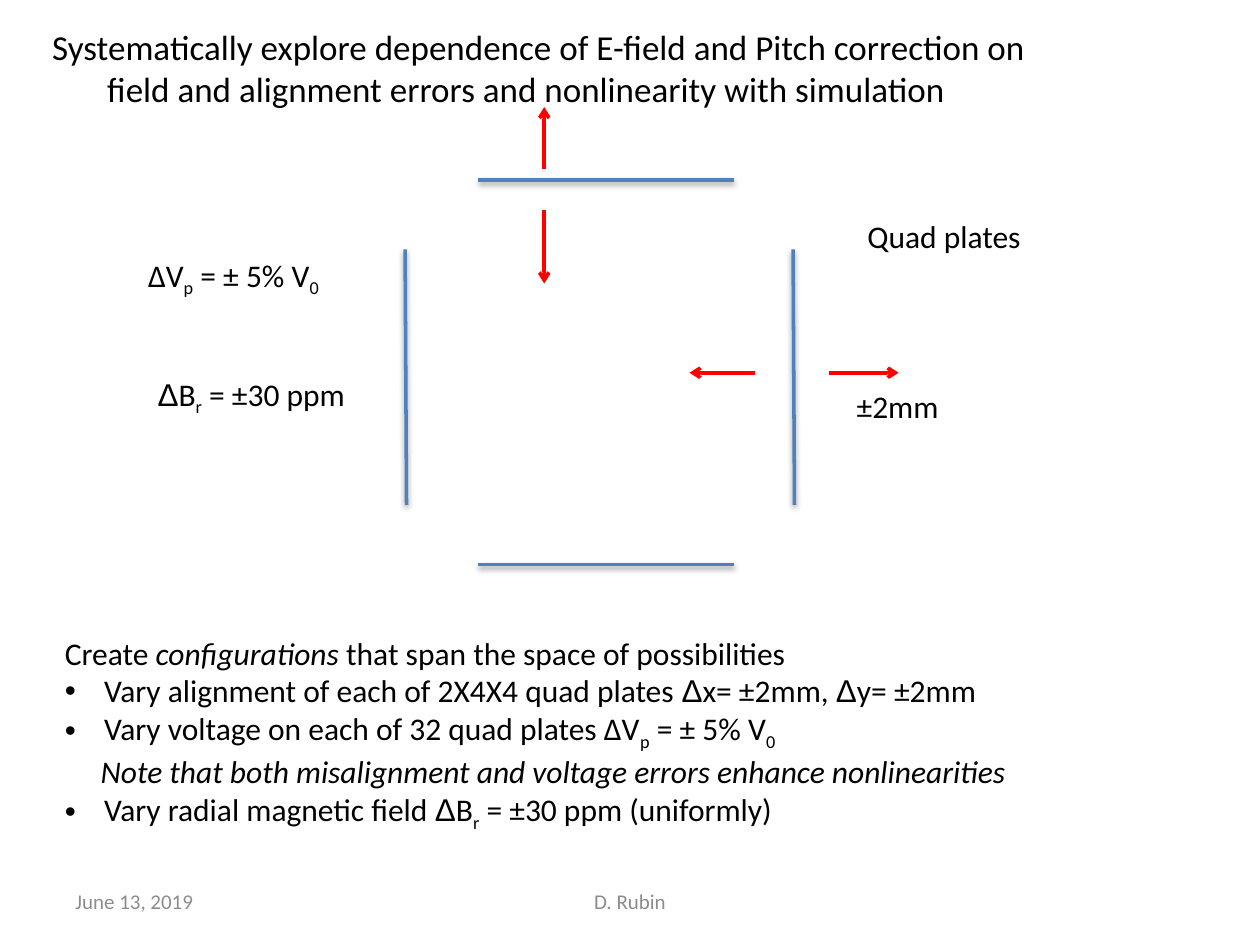
from lxml import etree
from pptx import Presentation
from pptx.dml.color import RGBColor
from pptx.enum.shapes import MSO_CONNECTOR
from pptx.enum.text import MSO_ANCHOR, MSO_AUTO_SIZE, PP_ALIGN
from pptx.oxml import parse_xml
from pptx.oxml.ns import nsdecls, qn
from pptx.util import Pt

LINE = MSO_CONNECTOR.STRAIGHT
MID = MSO_ANCHOR.MIDDLE
TOP = MSO_ANCHOR.TOP
GROW = MSO_AUTO_SIZE.SHAPE_TO_FIT_TEXT
LEFT, MIDDLE = PP_ALIGN.LEFT, PP_ALIGN.CENTER

BLACK, GREY, BLUE, RED = "000000", "8C8C8C", "4F81BD", "FF0000"
SHADE = (
    f'<a:effectLst {nsdecls("a")}>'
    '<a:outerShdw blurRad="40000" dist="20000" dir="5400000" rotWithShape="0">'
    '<a:srgbClr val="000000"><a:alpha val="38000"/></a:srgbClr>'
    '</a:outerShdw></a:effectLst>'
)
BARE = f'<a:effectLst {nsdecls("a")}/>'

# Run styles: "" plain, "i" italic, "s" subscript, "a" Arial
VOLT = [("ΔV", ""), ("p", "s"), (" = ± 5% V", ""), ("0", "s")]
FIELD = [("Δ", "a"), ("B", ""), ("r", "s"), (" = ±30 ppm", "")]


def paint(code):
    return RGBColor.from_string(code)


class Page:
    font = "Calibri"

    def __init__(self, slide):
        self.slide = slide

    def line(self, start, end, color, arrow=False):
        x, y = start
        a, b = end
        bar = self.slide.shapes.add_connector(LINE, Pt(x), Pt(y), Pt(a), Pt(b))
        bar.line.color.rgb = paint(color)
        bar.line.width = Pt(2)
        if arrow:
            tail = etree.SubElement(bar.line._get_or_add_ln(), qn("a:tailEnd"))
            tail.set("type", "arrow")
        bar._element.spPr.append(parse_xml(BARE if arrow else SHADE))

    def text(self, box, paras, size=18, color=BLACK, align=LEFT,
             wrap=False, grow=True, anchor=TOP):
        """Each paragraph is (runs, indent in points, has bullet)."""
        frame = self.slide.shapes.add_textbox(*map(Pt, box)).text_frame
        frame.word_wrap = wrap
        frame.vertical_anchor = anchor
        if grow:
            frame.auto_size = GROW
        for i, (runs, indent, dot) in enumerate(paras):
            para = frame.add_paragraph() if i else frame.paragraphs[0]
            para.alignment = align
            self.inset(para, indent, dot)
            for words, style in runs:
                self.run(para, words, style, size, color)

    def inset(self, para, indent, dot):
        props = para._p.get_or_add_pPr()
        props.set("marL", str(Pt(indent)))
        props.set("indent", str(Pt(-indent if dot else 0)))
        if dot:
            etree.SubElement(props, qn("a:buFont")).set("typeface", "Arial")
            etree.SubElement(props, qn("a:buChar")).set("char", "•")

    def run(self, para, words, style, size, color):
        run = para.add_run()
        run.text = words
        font = run.font
        font.size = Pt(size)
        font.name = "Arial" if style == "a" else self.font
        font.color.rgb = paint(color)
        if style == "i":
            font.italic = True
        if style == "s":
            run._r.get_or_add_rPr().set("baseline", "-25000")

    def label(self, box, runs):
        self.text(box, [(runs, 0, False)])

    def foot(self, box, words, align):
        self.text(box, [([(words, "")], 0, False)], 12, GREY, align,
                  wrap=True, grow=False, anchor=MID)


def main():
    deck = Presentation()
    deck.slide_width, deck.slide_height = Pt(720), Pt(540)
    page = Page(deck.slides.add_slide(deck.slide_layouts[6]))

    page.foot((36, 500.5, 168, 28.75), "June 13, 2019", LEFT)
    page.foot((246, 500.5, 228, 28.75), "D. Rubin", MIDDLE)

    # Quad plates: two sides, then top and bottom
    for x in (231.5, 453.2):
        page.line((x, 142.5), (x + 0.8, 288.5), BLUE)
    for y in (103, 322.6):
        page.line((419.6, y), (273.4, y), BLUE)

    # Shifts of the right and top plates
    for start, end in ((474, 513.5), (431.5, 394)):
        page.line((start, 213), (end, 213), RED, arrow=True)
    for start, end in ((96.5, 61.2), (120, 162)):
        page.line((311, start), (311, end), RED, arrow=True)

    page.label((488.6, 120.5, 104, 29), [("Quad plates", "")])
    page.label((482.4, 217.7, 62, 29), [("±2mm", "")])
    page.label((77.5, 142.5, 114.5, 29), VOLT)
    page.label((83, 210.5, 122, 29), FIELD)

    page.text((30, 358.5, 562.5, 124), [
        ([("Create ", ""), ("configurations", "i"),
          (" that span the space of possibilities", "")], 0, False),
        ([("Vary alignment of each of 2X4X4 quad plates ", ""), ("Δ", "a"),
          ("x= ±2mm, ", ""), ("Δ", "a"), ("y= ±2mm", "")], 22.5, True),
        ([("Vary voltage on each of 32 quad plates ", "")] + VOLT, 22.5, True),
        ([("Note that both misalignment and voltage errors enhance "
           "nonlinearities", "i")], 20.5, False),
        ([("Vary radial magnetic field ", "")] + FIELD
         + [(" (uniformly)", "")], 22.5, True),
    ])

    page.text((22.7, 10.8, 661, 80), [
        ([("Systematically explore dependence of E-field and Pitch "
           "correction on", "")], 0, False),
        ([("field and alignment errors and nonlinearity with simulation",
           "")], 31.5, False),
    ], size=20, wrap=True)

    deck.save("out.pptx")


if __name__ == "__main__":
    main()
